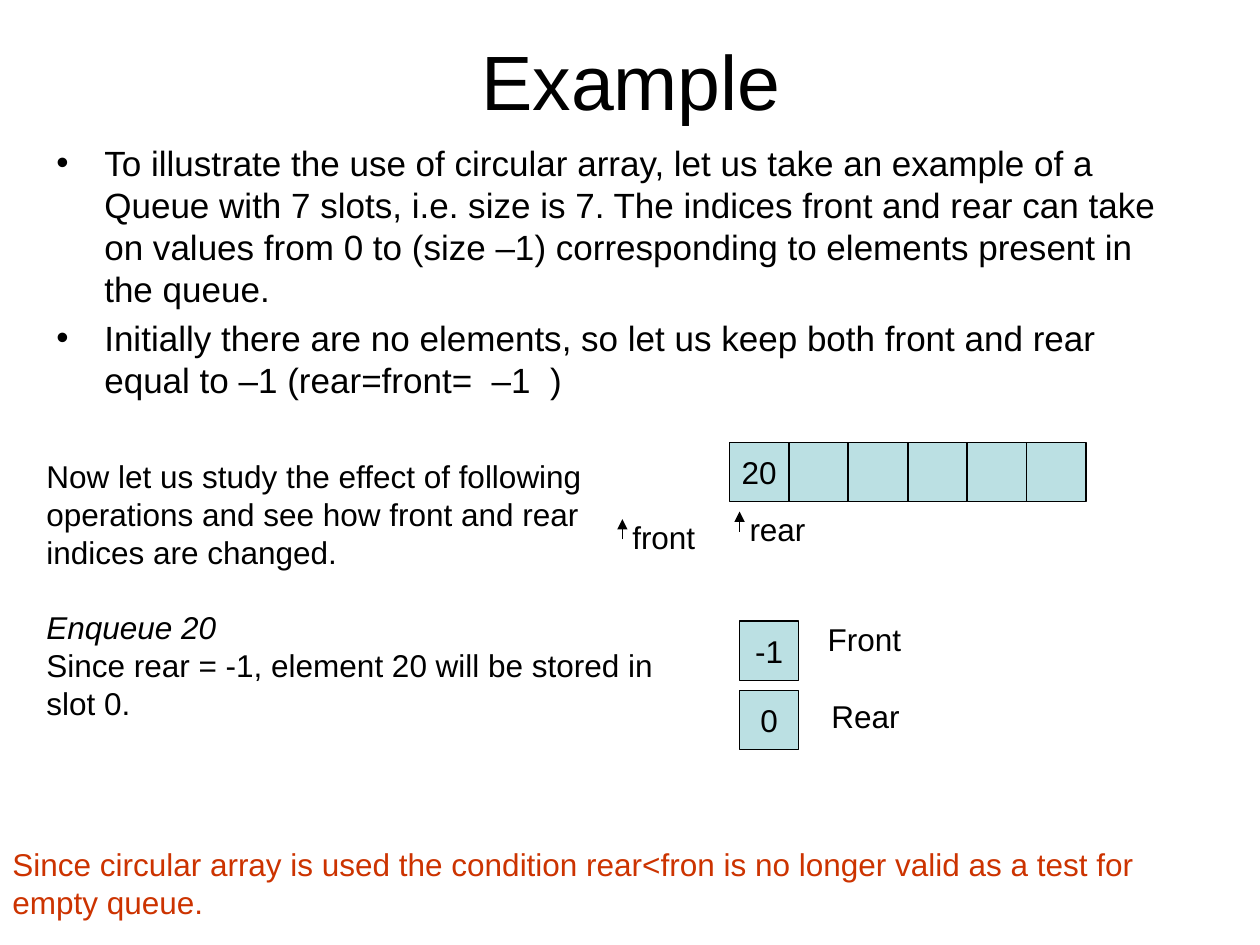
from pptx import Presentation
from pptx.dml.color import RGBColor
from pptx.enum.shapes import MSO_CONNECTOR, MSO_SHAPE
from pptx.enum.text import MSO_ANCHOR, MSO_AUTO_SIZE, PP_ALIGN
from pptx.oxml.ns import qn
from pptx.util import Inches, Pt
from lxml import etree

RECT = MSO_SHAPE.RECTANGLE
LINE = MSO_CONNECTOR.STRAIGHT
MIDDLE, TOP = MSO_ANCHOR.MIDDLE, MSO_ANCHOR.TOP
CENTER = PP_ALIGN.CENTER
NO_FIT, GROW = MSO_AUTO_SIZE.NONE, MSO_AUTO_SIZE.SHAPE_TO_FIT_TEXT
COLORS = {"ink": "000000", "cell": "BBE0E3", "note": "CC3300"}
FONT = "Arial"
CELL = 0.47
PITCH = 0.472
SLOTS = 6


def color(name):
    return RGBColor.from_string(COLORS[name])


def add_run(para, text, size=18, ink="ink", italic=False):
    run = para.add_run()
    run.text = text
    font = run.font
    font.name, font.size, font.italic = FONT, Pt(size), italic
    font.color.rgb = color(ink)


def add_text(slide, left, top, width, height, wrap=True):
    """Add an empty text box and return its text frame."""
    box = slide.shapes.add_textbox(*map(Inches, (left, top, width, height)))
    frame = box.text_frame
    frame.word_wrap = wrap
    frame.vertical_anchor = TOP
    return frame


def add_label(slide, text, left, top, width):
    frame = add_text(slide, left, top, width, 0.4, wrap=False)
    frame.auto_size = GROW
    add_run(frame.paragraphs[0], text)


def add_bullet(para, text):
    props = para._p.get_or_add_pPr()
    indent = Inches(0.38)
    props.set("marL", str(indent))
    props.set("indent", str(-indent))
    para.space_before = Pt(4)
    etree.SubElement(props, qn("a:buFont"), typeface=FONT)
    etree.SubElement(props, qn("a:buChar"), char="•")
    add_run(para, text, 20)


def add_cell(slide, left, top, text=""):
    cell = slide.shapes.add_shape(RECT, *map(Inches, (left, top, CELL, CELL)))
    cell.shadow.inherit = False
    cell.fill.solid()
    cell.fill.fore_color.rgb = color("cell")
    cell.line.color.rgb = color("ink")
    cell.line.width = Pt(0.75)
    if text:
        frame = cell.text_frame
        frame.word_wrap = False
        frame.vertical_anchor = MIDDLE
        para = frame.paragraphs[0]
        para.alignment = CENTER
        add_run(para, text)


def add_arrow(slide, x, top):
    """Add a short arrow that points up to top."""
    ends = map(Inches, (x, top + 0.16, x, top))
    arrow = slide.shapes.add_connector(LINE, *ends)
    arrow.line.color.rgb = color("ink")
    arrow.line.width = Pt(0.75)
    etree.SubElement(arrow.line._get_or_add_ln(), qn("a:tailEnd"), type="triangle")
    etree.SubElement(arrow._element.spPr, qn("a:effectLst"))


def add_title(slide, text):
    title = slide.shapes.title
    title.left, title.top, title.width, title.height = map(
        Inches, (0.51, 0.21, 9, 0.85))
    frame = title.text_frame
    frame.auto_size = NO_FIT
    frame.vertical_anchor = MIDDLE
    para = frame.paragraphs[0]
    para.alignment = CENTER
    add_run(para, text, 44)


def add_intro(slide):
    frame = add_text(slide, 0.35, 1.07, 9, 2.24)
    add_bullet(frame.paragraphs[0], (
        "To illustrate the use of circular array, let us take an example of a "
        "Queue with 7 slots, i.e. size is 7. The indices front and rear can "
        "take on values from 0 to (size –1) corresponding to elements present "
        "in the queue."))
    add_bullet(frame.add_paragraph(), (
        "Initially there are no elements, so let us keep both front and rear "
        "equal to –1 (rear=front=  –1  )"))


def add_steps(slide):
    frame = add_text(slide, 0.27, 3.58, 5.12, 2.65)
    add_run(frame.paragraphs[0], (
        "Now let us study the effect of following operations and see how "
        "front and rear indices are changed."))
    para = frame.add_paragraph()
    para.space_before = Pt(21.6)
    add_run(para, "Enqueue 20", italic=True)
    add_run(frame.add_paragraph(),
            "Since rear = -1, element 20 will be stored in slot 0.")


def add_queue(slide):
    for i in range(SLOTS):
        add_cell(slide, 5.79 + i * PITCH, 3.51, "" if i else "20")
    for text, x, top, width in (("rear", 5.87, 4.06, 0.65),
                                ("front", 4.94, 4.12, 0.7)):
        add_arrow(slide, x, top)
        add_label(slide, text, x - 0.02, top - 0.06, width)


def add_state(slide):
    """Show the values of both indices."""
    add_cell(slide, 5.87, 4.93, "-1")
    add_cell(slide, 5.87, 5.48, "0")
    add_label(slide, "Front", 6.47, 4.87, 0.8)
    add_label(slide, "Rear", 6.5, 5.48, 0.74)


def add_note(slide):
    frame = add_text(slide, 0, 6.66, 9.73, 0.7)
    add_run(frame.paragraphs[0], (
        "Since circular array is used the condition rear<fron is no longer "
        "valid as a test for empty queue."), ink="note")


def main():
    deck = Presentation()
    deck.slide_width, deck.slide_height = Inches(10), Inches(7.5)
    slide = deck.slides.add_slide(deck.slide_layouts[5])
    add_title(slide, "Example")
    add_intro(slide)
    add_steps(slide)
    add_queue(slide)
    add_state(slide)
    add_note(slide)
    deck.save("out.pptx")


if __name__ == "__main__":
    main()
